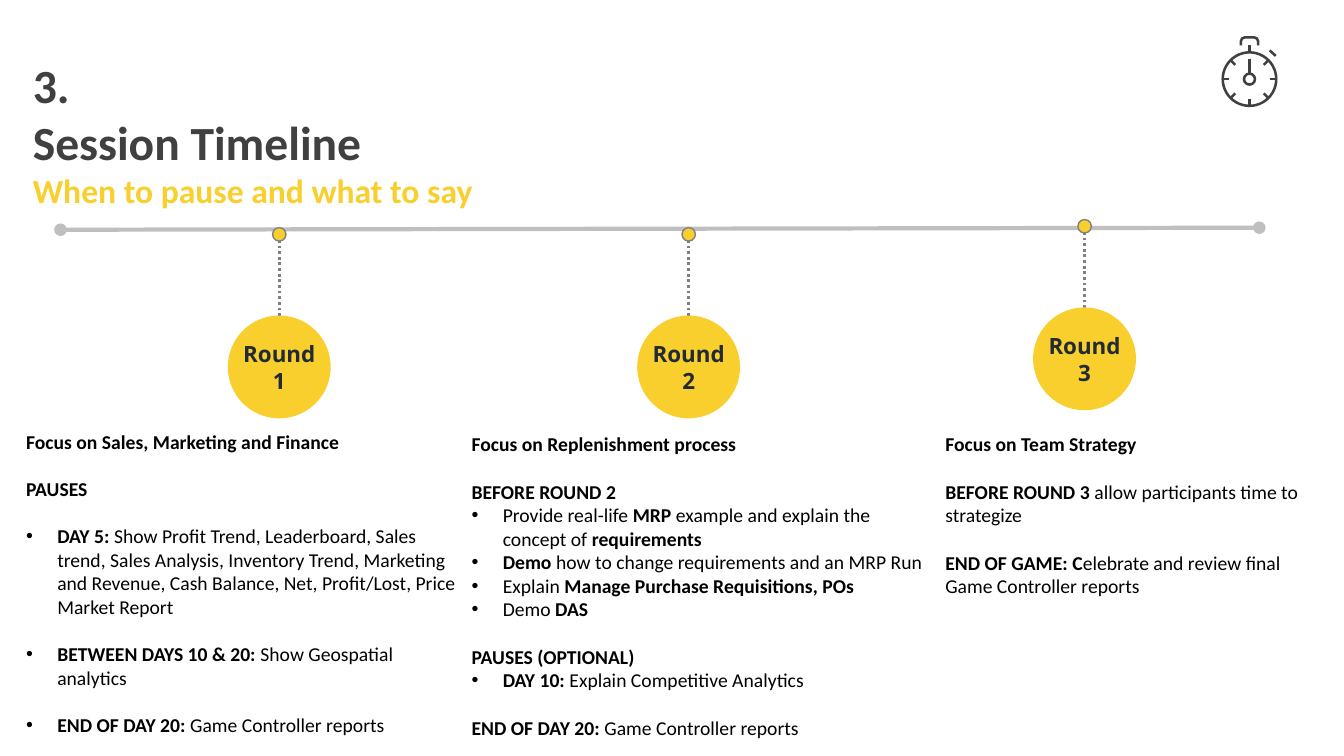
import math

from lxml import etree
from pptx import Presentation, util as u
from pptx.dml.color import RGBColor
from pptx.enum import dml, shapes, text
from pptx.oxml.ns import qn

YELLOW = RGBColor(0xF8, 0xCF, 0x2C)
LIGHT_GREY = RGBColor(0xBF, 0xBF, 0xBF)
GREY = RGBColor(0x80, 0x80, 0x80)
CHARCOAL = RGBColor(0x40, 0x40, 0x40)
NAVY = RGBColor(0x22, 0x2A, 0x35)
BLACK = RGBColor(0, 0, 0)

# Square grid, 100 columns across the slide
SLIDE_WIDTH, SLIDE_HEIGHT = u.Inches(13.33), u.Inches(7.5)
CELL = SLIDE_WIDTH / 100

DISC, DOT = 7.65, 1
NOTE_SIZE, NOTE_GAP, NOTE_INDENT = 14, u.Pt(17), u.Inches(0.31)

# Column and row of each dot on the timeline
ROUNDS = [("Round 1", 20.78, 17.44), ("Round 2", 51.24, 17.44), ("Round 3", 80.7, 16.84)]

# Box of each column of notes, then its lines: "+" opens a gap above,
# "•" makes a bullet, and ** switches bold on and off
NOTES = [
    ((1.2, 31.6, 33.75, 23.7), [
        "**Focus on Sales, Marketing and Finance**",
        "+**PAUSES**",
        "+•**DAY 5: **Show Profit Trend, Leaderboard, Sales trend, Sales Analysis, "
        "Inventory Trend, Marketing and Revenue, Cash Balance, Net, Profit/Lost, "
        "Price Market Report",
        "+•**BETWEEN DAYS 10 & 20:** Show Geospatial analytics",
        "+•**END OF DAY 20: **Game Controller reports",
    ]),
    ((34.35, 31.8, 35.2, 23.7), [
        "**Focus on Replenishment process**",
        "+**BEFORE ROUND 2**",
        "•Provide real-life **MRP** example and explain the concept of **requirements**",
        "•**Demo** how to change requirements and an MRP Run",
        "•Explain **Manage Purchase Requisitions, POs**",
        "•Demo **DAS**",
        "+**PAUSES (OPTIONAL)**",
        "•**DAY 10: **Explain Competitive Analytics",
        "+**END OF DAY 20: **Game Controller reports",
    ]),
    ((69.6, 31.8, 29.05, 14.9), [
        "**Focus on Team Strategy**",
        "+**BEFORE ROUND 3 **allow participants time to strategize",
        "+**END OF GAME: C**elebrate and review final Game Controller reports",
    ]),
]


def grid(*cells):
    return [u.Emu(round(cell * CELL)) for cell in cells]


def set_font(paragraph, name, size, color, bold=None):
    font = paragraph.font
    font.name, font.size, font.bold = name, u.Pt(size), bold
    font.color.rgb = color


def add_line(parent, start, end, color, width, dash=None, oval_ends=False):
    line = parent.add_connector(shapes.MSO_CONNECTOR.STRAIGHT, *grid(*start, *end))
    line.line.color.rgb = color
    line.line.width = u.Pt(width)
    if dash:
        line.line.dash_style = dash
    if oval_ends:
        stroke = line.line._get_or_add_ln()
        for end_tag in ("a:headEnd", "a:tailEnd"):
            etree.SubElement(stroke, qn(end_tag), type="oval")
    etree.SubElement(line._element.spPr, qn("a:effectLst"))


def add_circle(parent, center, diameter, fill=None, outline=None, width=1):
    x, y = center
    circle = parent.add_shape(
        shapes.MSO_SHAPE.OVAL,
        *grid(x - diameter / 2, y - diameter / 2, diameter, diameter))
    circle.shadow.inherit = False
    if fill is None:
        circle.fill.background()
    else:
        circle.fill.solid()
        circle.fill.fore_color.rgb = fill
    if outline is None:
        circle.line.fill.background()
    else:
        circle.line.color.rgb = outline
        circle.line.width = u.Pt(width)


def add_text_frame(parent, box):
    frame = parent.add_textbox(*grid(*box)).text_frame
    frame.word_wrap = True
    return frame


def next_paragraph(frame, index):
    return frame.add_paragraph() if index else frame.paragraphs[0]


def add_heading(parent):
    frame = add_text_frame(parent, (1.7, 3.8, 43.95, 14.6))
    lines = [("3.", 34, CHARCOAL), ("Session Timeline", 34, CHARCOAL),
             ("When to pause and what to say", 24, YELLOW)]
    for index, (wording, size, color) in enumerate(lines):
        paragraph = next_paragraph(frame, index)
        paragraph.text = wording
        set_font(paragraph, "Calibri", size, color, bold=True)


def add_round(parent, name, x, y):
    group = parent.add_group_shape().shapes
    disc_y = y + 9.87
    add_line(group, (x, y + 6.5), (x, y), GREY, 2, dash=dml.MSO_LINE.ROUND_DOT)
    add_circle(group, (x, disc_y), DISC, fill=YELLOW)
    add_circle(group, (x, y), DOT, fill=YELLOW, outline=GREY)
    frame = add_text_frame(group, (x - DISC / 2, disc_y - 1.75, DISC, 3.5))
    frame.vertical_anchor = text.MSO_ANCHOR.MIDDLE
    label = frame.paragraphs[0]
    label.text = name
    label.alignment = text.PP_ALIGN.CENTER
    set_font(label, "Open Sans", 16, NAVY, bold=True)


def add_notes(parent, box, lines):
    frame = add_text_frame(parent, box)
    for index, line in enumerate(lines):
        paragraph = next_paragraph(frame, index)
        if line.startswith("+"):
            paragraph.space_before = NOTE_GAP
        wording = line.lstrip("+")
        if wording.startswith("•"):
            wording = wording[1:]
            properties = paragraph._p.get_or_add_pPr()
            properties.set("marL", str(NOTE_INDENT))
            properties.set("indent", str(-NOTE_INDENT))
            etree.SubElement(properties, qn("a:buFont"), typeface="Arial")
            etree.SubElement(properties, qn("a:buChar"), char="•")
        set_font(paragraph, "Calibri", NOTE_SIZE, BLACK)
        for part, wording_part in enumerate(wording.split("**")):
            if wording_part:
                run = paragraph.add_run()
                run.text = wording_part
                run.font.bold = part % 2 == 1


def add_stopwatch(parent, x, y):
    group = parent.add_group_shape().shapes
    stroke = 1.8
    radius, tick_start, hub = 1.99, 1.5, 0.41

    def spoke(angle, inner, outer):
        dx, dy = math.sin(angle), -math.cos(angle)
        add_line(group, (x + inner * dx, y + inner * dy),
                 (x + outer * dx, y + outer * dy), CHARCOAL, stroke)

    # Case, hub and ticks, with the hand and stem at the top
    for size in (radius, hub):
        add_circle(group, (x, y), 2 * size, outline=CHARCOAL, width=stroke)
    for tick in range(1, 8):
        spoke(tick * math.pi / 4, tick_start, radius)
    spoke(0, hub, tick_start)
    spoke(0, radius, 2.55)
    # Side button
    add_line(group, (x + 1.5, y - 2.14), (x + 1.95, y - 1.73), CHARCOAL, stroke)
    # Crown
    outline = [(-0.64, -2.51), (-0.64, -2.82), (-0.55, -3.03), (-0.34, -3.11),
               (0.34, -3.11), (0.55, -3.03), (0.64, -2.82), (0.64, -2.51)]
    points = [grid(x + dx, y + dy) for dx, dy in outline]
    builder = group.build_freeform(*points[0])
    builder.add_line_segments(points[1:], close=False)
    crown = builder.convert_to_shape()
    crown.shadow.inherit = False
    crown.fill.background()
    crown.line.color.rgb = CHARCOAL
    crown.line.width = u.Pt(stroke)


def main():
    deck = Presentation()
    deck.slide_width, deck.slide_height = SLIDE_WIDTH, SLIDE_HEIGHT
    canvas = deck.slides.add_slide(deck.slide_layouts[6]).shapes

    # Timeline with its rounds
    add_line(canvas, (4.5, 17.1), (93.7, 16.95), LIGHT_GREY, 3, oval_ends=True)
    for name, x, y in ROUNDS:
        add_round(canvas, name, x, y)

    # Heading, notes and icon
    add_heading(canvas)
    for box, lines in NOTES:
        add_notes(canvas, box, lines)
    add_stopwatch(canvas, 92.97, 5.89)

    deck.save("out.pptx")


if __name__ == "__main__":
    main()
